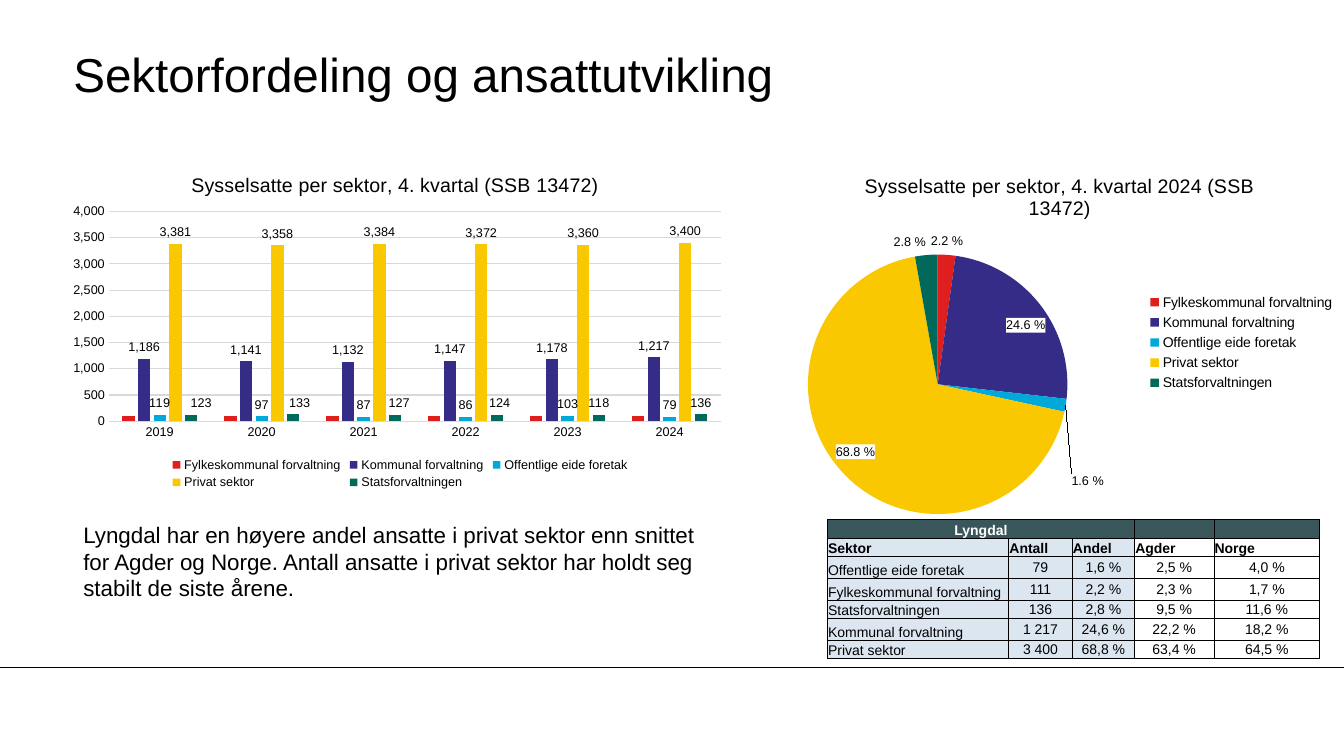
import copy

import pptx
import pptx.chart.data
import pptx.dml.color
import pptx.enum.chart
import pptx.enum.shapes
import pptx.enum.text
import pptx.oxml
import pptx.oxml.ns
import pptx.util

Cm, Pt = pptx.util.Cm, pptx.util.Pt
ALIGN = pptx.enum.text.PP_ALIGN
ANCHOR = pptx.enum.text.MSO_ANCHOR
CHART = pptx.enum.chart
FONT = "Arial"
COLORS = {"text": "000000", "white": "FFFFFF", "grid": "D9D9D9", "header": "39575B", "lyngdal": "DCE6F1"}

TITLE = "Sektorfordeling og ansattutvikling"
BODY = ("Lyngdal har en høyere andel ansatte i privat sektor enn snittet for Agder og Norge. "
        "Antall ansatte i privat sektor har holdt seg stabilt de siste årene.")
BAR_TITLE = "Sysselsatte per sektor, 4. kvartal (SSB 13472)"
PIE_TITLE = "Sysselsatte per sektor, 4. kvartal 2024 (SSB 13472)"
YEARS = ["2019", "2020", "2021", "2022", "2023", "2024"]
SECTORS = [
    ("Fylkeskommunal forvaltning", "DF1F1D", [100] * 6, 2.2),
    ("Kommunal forvaltning", "342C86", [1186, 1141, 1132, 1147, 1178, 1217], 24.6),
    ("Offentlige eide foretak", "00A9DA", [119, 97, 87, 86, 103, 79], 1.6),
    ("Privat sektor", "FAC800", [3381, 3358, 3384, 3372, 3360, 3400], 68.8),
    ("Statsforvaltningen", "00695A", [123, 133, 127, 124, 118, 136], 2.8),
]
STATE_LABEL_SHIFTS = [0.015, 0.01, 0.006, 0.004]
TABLE = [
    ["Lyngdal", "", "", "", ""],
    ["Sektor", "Antall", "Andel", "Agder", "Norge"],
    ["Offentlige eide foretak", "79", "1,6 %", "2,5 %", "4,0 %"],
    ["Fylkeskommunal forvaltning", "111", "2,2 %", "2,3 %", "1,7 %"],
    ["Statsforvaltningen", "136", "2,8 %", "9,5 %", "11,6 %"],
    ["Kommunal forvaltning", "1 217", "24,6 %", "22,2 %", "18,2 %"],
    ["Privat sektor", "3 400", "68,8 %", "63,4 %", "64,5 %"],
]
COL_WIDTHS = [4.57, 1.6, 1.57, 2.0, 2.67]
ROW_HEIGHTS = [0.48, 0.46, 0.55, 0.55, 0.46, 0.55, 0.46]


def rgb(value):
    return pptx.dml.color.RGBColor.from_string(value)


def set_font(font, size, color="text", bold=False):
    font.name, font.size, font.bold = FONT, Pt(size), bold
    font.color.rgb = rgb(COLORS[color])


def write(tf, text, size=10, color="text", bold=False, align=ALIGN.LEFT):
    p = tf.paragraphs[0]
    p.alignment = align
    if text:
        r = p.add_run()
        r.text = text
        set_font(r.font, size, color, bold)
    else:
        p._p.get_or_add_endParaRPr().set("sz", str(size * 100))


def add_text(s, box, text, margins=None, anchor=ANCHOR.TOP, **style):
    tf = s.shapes.add_textbox(*map(Cm, box)).text_frame
    tf.word_wrap = True
    tf.vertical_anchor = anchor
    if margins is not None:
        tf.margin_left = tf.margin_right = tf.margin_top = tf.margin_bottom = Cm(margins)
    write(tf, text, **style)


def chart_xml(body):
    return pptx.oxml.parse_xml(body.replace(">", f" {pptx.oxml.ns.nsdecls('c', 'a')}>", 1))


def layout_xml(edge="", **fractions):
    modes = "".join(f'<c:{k}Mode val="edge"/>' for k in "xy") if edge else ""
    values = "".join(f'<c:{k} val="{v}"/>' for k, v in fractions.items())
    target = '<c:layoutTarget val="inner"/>' if edge == "inner" else ""
    return f"<c:layout><c:manualLayout>{target}{modes}{values}</c:manualLayout></c:layout>"


def place(element, index, edge="edge", **fractions):
    for old in element.findall(pptx.oxml.ns.qn("c:layout")):
        element.remove(old)
    element.insert(index, chart_xml(layout_xml(edge, **fractions)))


def move_label(labels, index, x, y):
    group = labels._element
    label = chart_xml(f'<c:dLbl><c:idx val="{index}"/>{layout_xml(x=x, y=y)}</c:dLbl>')
    for child in group:
        if child.tag not in map(pptx.oxml.ns.qn, ("c:dLbl", "c:showLeaderLines")):
            label.append(copy.deepcopy(child))
    group.insert(len(group.findall(pptx.oxml.ns.qn("c:dLbl"))), label)


def format_labels(labels, number_format, position):
    set_font(labels.font, 9)
    labels.number_format = number_format
    labels.number_format_is_linked = False
    labels.position = position


def add_chart(s, kind, box, data, title, legend_position, legend_size, title_at, plot_at, legend_at):
    chart = s.shapes.add_chart(kind, *map(Cm, box), data).chart
    set_font(chart.font, 10)
    chart.has_title = chart.has_legend = True
    write(chart.chart_title.text_frame, title, size=14, align=ALIGN.CENTER)
    chart.legend.position = legend_position
    chart.legend.include_in_layout = False
    set_font(chart.legend.font, legend_size)
    root = chart._chartSpace
    place(root.xpath("c:chart/c:title")[0], 1, **title_at)
    place(root.xpath("c:chart/c:plotArea")[0], 0, "inner", **plot_at)
    place(root.xpath("c:chart/c:legend")[0], 1, **legend_at)
    return chart


def add_bar_chart(s):
    data = pptx.chart.data.CategoryChartData(number_format="#,##0")
    data.categories = YEARS
    for name, _, counts, _ in SECTORS:
        data.add_series(name, counts)
    chart = add_chart(
        s, CHART.XL_CHART_TYPE.COLUMN_CLUSTERED, (1.5, 3.86, 17, 8.64), data, BAR_TITLE,
        CHART.XL_LEGEND_POSITION.BOTTOM, 9, dict(x=0.19, y=0.045),
        dict(x=0.073, y=0.17, w=0.907, h=0.612), dict(x=0.16, y=0.88, w=0.69, h=0.11))
    plot = chart.plots[0]
    plot.gap_width, plot.overlap, plot.vary_by_categories = 219, -27, False
    for i, (series, (_, color, _, _)) in enumerate(zip(plot.series, SECTORS)):
        series.format.fill.solid()
        series.format.fill.fore_color.rgb = rgb(color)
        if i:
            series.data_labels.show_value = True
            format_labels(series.data_labels, "#,##0", CHART.XL_LABEL_POSITION.OUTSIDE_END)
    for i, shift in enumerate(STATE_LABEL_SHIFTS):
        move_label(plot.series[-1].data_labels, i, shift, 0)
    for axis in (chart.category_axis, chart.value_axis):
        set_font(axis.tick_labels.font, 9)
        axis.major_tick_mark = axis.minor_tick_mark = CHART.XL_TICK_MARK.NONE
    values = chart.value_axis
    values.minimum_scale, values.maximum_scale, values.major_unit = 0, 4000, 500
    values.tick_labels.number_format = "#,##0"
    values.tick_labels.number_format_is_linked = False
    values.format.line.fill.background()
    for line in (chart.category_axis.format.line, values.major_gridlines.format.line):
        line.color.rgb = rgb(COLORS["grid"])
        line.width = Pt(0.75)


def add_pie_chart(s):
    data = pptx.chart.data.CategoryChartData(number_format="0.0")
    data.categories = [sector[0] for sector in SECTORS]
    data.add_series("Series 1", [sector[3] for sector in SECTORS])
    chart = add_chart(
        s, CHART.XL_CHART_TYPE.PIE, (19.33, 3.86, 14.53, 9.45), data, PIE_TITLE,
        CHART.XL_LEGEND_POSITION.RIGHT, 10, dict(x=0.163, y=0.045),
        dict(x=0.071, y=0.27, w=0.45, h=0.693), dict(x=0.655, y=0.365, w=0.335, h=0.28))
    series = chart.plots[0].series[0]
    for i, (_, color, _, _) in enumerate(SECTORS):
        fill = series.points[i].format.fill
        fill.solid()
        fill.fore_color.rgb = rgb(color)
    labels = series.data_labels
    labels.show_percentage, labels.show_value = True, False
    format_labels(labels, "0.0\\ %", CHART.XL_LABEL_POSITION.BEST_FIT)
    labels._element.find(pptx.oxml.ns.qn("c:numFmt")).addnext(chart_xml(
        f'<c:spPr><a:solidFill><a:srgbClr val="{COLORS["white"]}"/></a:solidFill></c:spPr>'))
    move_label(labels, SECTORS.index(next(x for x in SECTORS if x[3] == 1.6)), 0, 0.18)


def add_sector_table(s):
    table = s.shapes.add_table(len(TABLE), len(COL_WIDTHS), Cm(20.85), Cm(13.08),
                               Cm(sum(COL_WIDTHS)), Cm(sum(ROW_HEIGHTS))).table
    table.first_row = table.horz_banding = False
    for column, width in zip(table.columns, COL_WIDTHS):
        column.width = Cm(width)
    for i, (row, texts) in enumerate(zip(table.rows, TABLE)):
        row.height = Cm(ROW_HEIGHTS[i])
        for j, text in enumerate(texts):
            cell = table.cell(i, j)
            centered = i == 0 or (i > 1 and j > 0)
            cell.margin_left = cell.margin_right = cell.margin_top = Cm(0.02)
            cell.margin_bottom = 0
            cell.vertical_anchor = ANCHOR.MIDDLE if i > 1 and j > 0 else ANCHOR.BOTTOM
            write(cell.text_frame, text, color="text" if i else "white", bold=i < 2,
                  align=ALIGN.CENTER if centered else ALIGN.LEFT)
            for side in "LRTB":
                cell._tc.get_or_add_tcPr().append(pptx.oxml.parse_xml(
                    f'<a:ln{side} {pptx.oxml.ns.nsdecls("a")} w="6350"><a:solidFill>'
                    f'<a:srgbClr val="{COLORS["text"]}"/></a:solidFill></a:ln{side}>'))
            if i == 0 or j < 3:
                cell.fill.solid()
                cell.fill.fore_color.rgb = rgb(COLORS["lyngdal" if i else "header"])
            else:
                cell.fill.background()
    table.cell(0, 0).merge(table.cell(0, 2))


def main():
    prs = pptx.Presentation()
    prs.slide_width, prs.slide_height = Cm(33.87), Cm(19.05)
    s = prs.slides.add_slide(prs.slide_layouts[6])
    line = s.shapes.add_connector(pptx.enum.shapes.MSO_CONNECTOR.STRAIGHT, 0, Cm(16.81), prs.slide_width, Cm(16.81))
    line.line.color.rgb = rgb(COLORS["text"])
    line.line.width = Pt(0.75)
    line._element.spPr.append(pptx.oxml.parse_xml(f'<a:effectLst {pptx.oxml.ns.nsdecls("a")}/>'))
    add_text(s, (1.85, 0.89, 28.2, 1.9), TITLE, margins=0, anchor=ANCHOR.MIDDLE, size=34)
    add_text(s, (1.85, 13, 16.28, 2.31), BODY, size=16)
    add_sector_table(s)
    add_bar_chart(s)
    add_pie_chart(s)
    prs.save("out.pptx")


if __name__ == "__main__":
    main()
